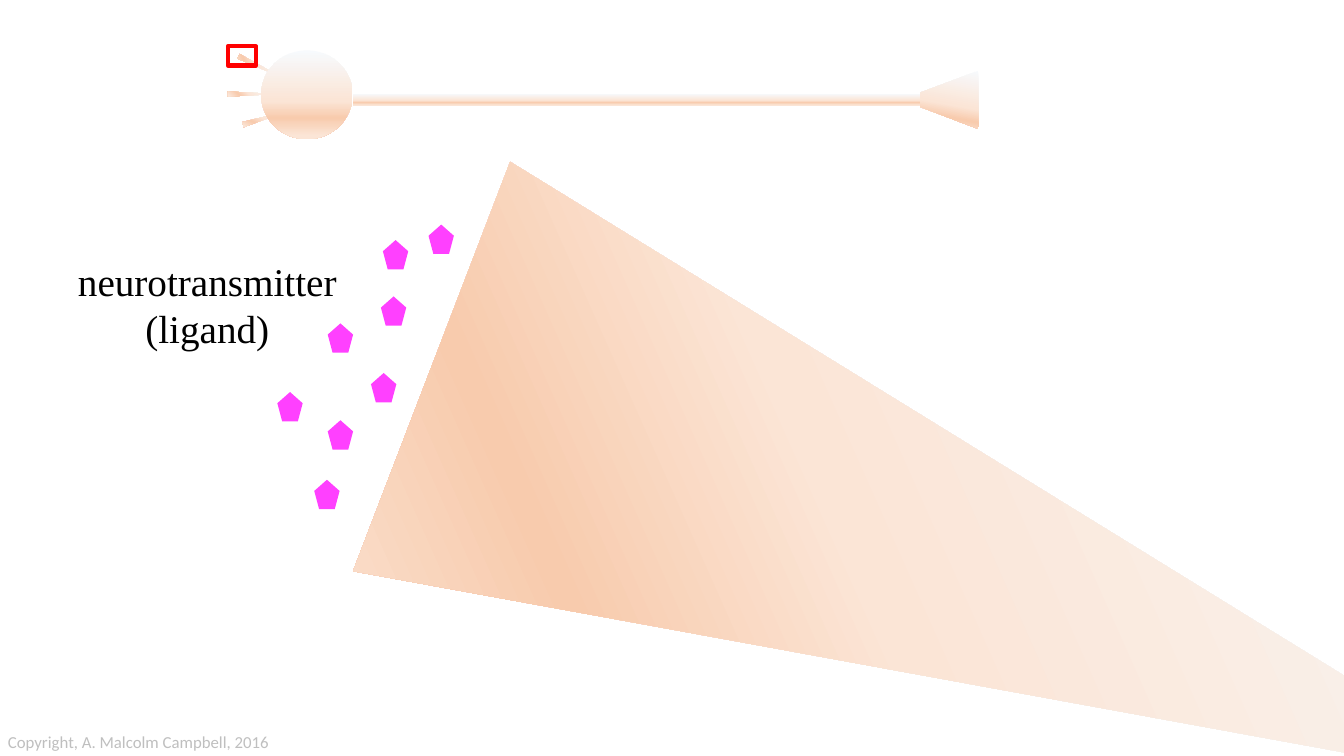
from pptx import Presentation
from pptx.dml.color import RGBColor
from pptx.enum.shapes import MSO_SHAPE as SHAPE
from pptx.enum.text import MSO_AUTO_SIZE as AUTO, PP_ALIGN as ALIGN
from pptx.oxml.ns import qn
from pptx.util import Cm, Pt
from lxml.etree import SubElement

CELL_STOPS = [(0, "F7FAFD"), (57, "FBE5D6"), (76, "F8CBAD"), (96, "FBE5D6")]
DENDRITES = [(6.5, 1.07, 116), (6.3, 1.75, 90), (6.65, 2.34, 73)]
LIGANDS = [(9.6, 7.47), (9.65, 6.05), (10.8, 5.66), (7.92, 12.09),
           (6.99, 9.88), (8.26, 8.15), (8.26, 10.59), (9.35, 9.4)]


def rgb(color):
    return RGBColor.from_string(color)


def add_shape(s, kind, x, y, w, h, fill=None, rotation=0):
    sp = s.shapes.add_shape(kind, Cm(x), Cm(y), Cm(w), Cm(h))
    sp.shadow.inherit = False
    sp.rotation = rotation
    sp.line.fill.background()
    if fill:
        sp.fill.solid()
        sp.fill.fore_color.rgb = rgb(fill)
    else:
        sp.fill.background()
    return sp


def add_cell_part(s, kind, x, y, w, h, angle, rotation=0):
    """Add a part of the neuron; angle is the clockwise gradient direction."""
    sp = add_shape(s, kind, x, y, w, h, rotation=rotation)
    sp.fill.gradient()
    sp.fill.gradient_angle = 360 - angle
    stops = next(sp.element.spPr.iter(qn("a:gsLst")))
    for stop in list(stops):
        stops.remove(stop)
    for percent, color in CELL_STOPS:
        stop = SubElement(stops, qn("a:gs"), pos=str(percent * 1000))
        SubElement(stop, qn("a:srgbClr"), val=color)
    return sp


def add_text(s, x, y, w, h, lines, font, size, color, align=ALIGN.LEFT, wrap=True):
    tf = s.shapes.add_textbox(Cm(x), Cm(y), Cm(w), Cm(h)).text_frame
    tf.word_wrap = wrap
    tf.auto_size = AUTO.SHAPE_TO_FIT_TEXT
    for i, line in enumerate(lines):
        p = tf.add_paragraph() if i else tf.paragraphs[0]
        p.alignment = align
        r = p.add_run()
        r.text = line
        r.font.name = font
        r.font.size = Pt(size)
        r.font.color.rgb = rgb(color)


def add_neuron(s):
    for x, y, rotation in DENDRITES:
        add_cell_part(s, SHAPE.ISOSCELES_TRIANGLE, x, y, 0.13, 1.24, 45, rotation)
    add_cell_part(s, SHAPE.OVAL, 6.58, 1.27, 2.31, 2.24, 90)
    add_cell_part(s, SHAPE.RECTANGLE, 8.89, 2.36, 14.33, 0.3, 90)
    terminal = add_cell_part(s, SHAPE.TRAPEZOID, 23.19, 1.78, 1.47, 1.47, 190, 270)
    terminal.adjustments[0] = 0.377


def main():
    prs = Presentation()
    prs.slide_width, prs.slide_height = Cm(33.87), Cm(19.05)
    s = prs.slides.add_slide(prs.slide_layouts[6])

    add_cell_part(s, SHAPE.ISOSCELES_TRIANGLE, 19.08, -0.2, 11.05, 29.41, 45, 111)
    add_neuron(s)

    zoom_frame = add_shape(s, SHAPE.RECTANGLE, 5.74, 1.17, 0.71, 0.48)
    zoom_frame.line.color.rgb = rgb("FF0000")
    zoom_frame.line.width = Pt(3)

    for x, y in LIGANDS:
        add_shape(s, SHAPE.REGULAR_PENTAGON, x, y, 0.64, 0.74, "FF40FF")

    add_text(s, 1.63, 6.35, 7.19, 2.64, ["neurotransmitter", "(ligand)"],
             "Times New Roman", 28, "000000", ALIGN.CENTER)
    add_text(s, -0.05, 18.31, 7.16, 0.76, ["Copyright, A. Malcolm Campbell, 2016"],
             "Calibri", 12, "BFBFBF", wrap=False)
    prs.save("out.pptx")


if __name__ == "__main__":
    main()
